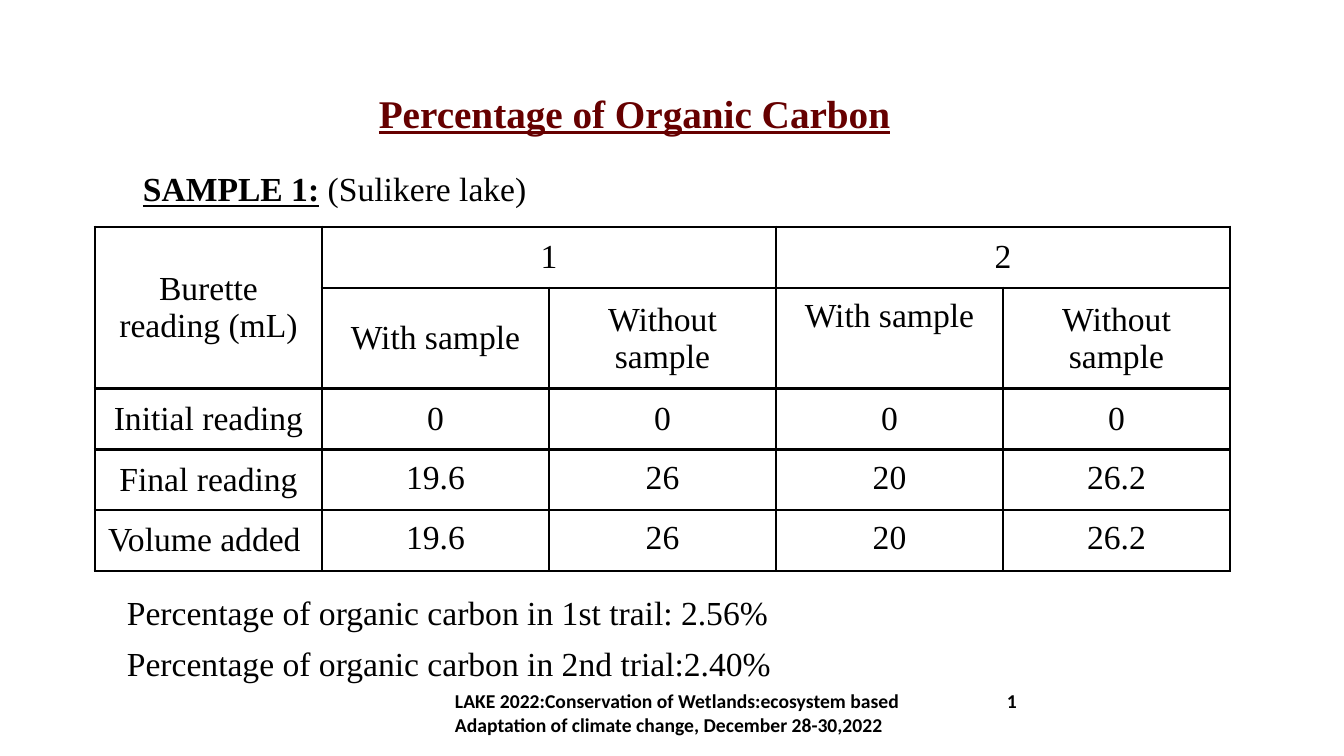
from lxml.etree import SubElement
from pptx import Presentation
from pptx.dml.color import RGBColor
from pptx.enum.text import MSO_ANCHOR, PP_ALIGN
from pptx.oxml.ns import qn
from pptx.util import Emu, Pt

MAROON = RGBColor(0x66, 0x00, 0x00)
BLACK = RGBColor(0x00, 0x00, 0x00)
SERIF = "Times New Roman"
EMU_PER_PX = 914400 / 100.8


def px(length):
    return Emu(round(length * EMU_PER_PX))


def add_text(left, top, width, height, lines, size, font=SERIF, color=BLACK,
             bold=False, spacing=0.9, before=0, inset=10):
    frame = slide.shapes.add_textbox(px(left), px(top), px(width), px(height)).text_frame
    frame.word_wrap = True
    frame.margin_left = frame.margin_right = px(10)
    frame.margin_top = frame.margin_bottom = px(inset)
    frame.text = "\n".join(lines)
    for number, paragraph in enumerate(frame.paragraphs):
        paragraph.line_spacing = spacing
        if number:
            paragraph.space_before = Pt(before)
        for run in paragraph.runs:
            run.font.name = font
            run.font.size = Pt(size)
            run.font.bold = bold
            run.font.color.rgb = color
    return frame


presentation = Presentation()
presentation.slide_width = px(1344)
presentation.slide_height = px(756)
slide = presentation.slides.add_slide(presentation.slide_layouts[6])

title = add_text(332, 63, 605, 105, ["Percentage of Organic Carbon"], 28,
                 color=MAROON, bold=True, inset=5)
title.vertical_anchor = MSO_ANCHOR.MIDDLE
title.paragraphs[0].alignment = PP_ALIGN.CENTER
title.paragraphs[0].runs[0].font.underline = True

sample = add_text(133, 168, 1000, 50, ["SAMPLE 1:"], 24, bold=True, inset=5)
sample.paragraphs[0].runs[0].font.underline = True
lake = sample.paragraphs[0].add_run()
lake.text = " (Sulikere lake)"
lake.font.name = SERIF
lake.font.size = Pt(24)
lake.font.color.rgb = BLACK

readings = [
    ["Burette reading (mL)", "1", "", "2", ""],
    ["", "With sample", "Without sample", "With sample", "Without sample"],
    ["Initial reading", "0", "0", "0", "0"],
    ["Final reading", "19.6", "26", "20", "26.2"],
    ["Volume added ", "19.6", "26", "20", "26.2"],
]
row_heights = [61, 100, 61, 60, 61]
burette_table = slide.shapes.add_table(
    5, 5, px(95), px(227), px(5 * 227), px(sum(row_heights))).table
burette_table.first_row = False
burette_table.horz_banding = False
for column in burette_table.columns:
    column.width = px(227)

for row, values in enumerate(readings):
    burette_table.rows[row].height = px(row_heights[row])
    for column, value in enumerate(values):
        cell = burette_table.cell(row, column)
        cell.margin_left = cell.margin_right = px(10)
        cell.margin_top = cell.margin_bottom = px(10)
        raised = (row, column) == (1, 3) or (row > 2 and column > 0)
        cell.vertical_anchor = MSO_ANCHOR.TOP if raised else MSO_ANCHOR.MIDDLE
        properties = cell._tc.get_or_add_tcPr()
        for side in ("a:lnL", "a:lnR", "a:lnT", "a:lnB"):
            border = SubElement(properties, qn(side), w=str(Pt(2.25)))
            border_fill = SubElement(border, qn("a:solidFill"))
            SubElement(border_fill, qn("a:srgbClr"), val=str(BLACK))
        cell.fill.background()
        cell.text_frame.text = value
        paragraph = cell.text_frame.paragraphs[0]
        paragraph.alignment = PP_ALIGN.CENTER
        for run in paragraph.runs:
            run.font.name = SERIF
            run.font.size = Pt(24)
            run.font.color.rgb = BLACK

burette_table.cell(0, 0).merge(burette_table.cell(1, 0))
for trial in (1, 3):
    burette_table.cell(0, trial).merge(burette_table.cell(0, trial + 1))

add_text(117, 587, 1110, 105, [
    "Percentage of organic carbon in 1st trail: 2.56%",
    "Percentage of organic carbon in 2nd trial:2.40%",
], 24, before=10)

add_text(445, 679, 520, 68, [
    "LAKE 2022:Conservation of Wetlands:ecosystem based",
    "Adaptation of climate change, December 28-30,2022",
], 14, font="Calibri", bold=True, spacing=1.0)
add_text(997, 679, 60, 44, ["1"], 14, font="Calibri", bold=True, spacing=1.0)

presentation.save("out.pptx")
